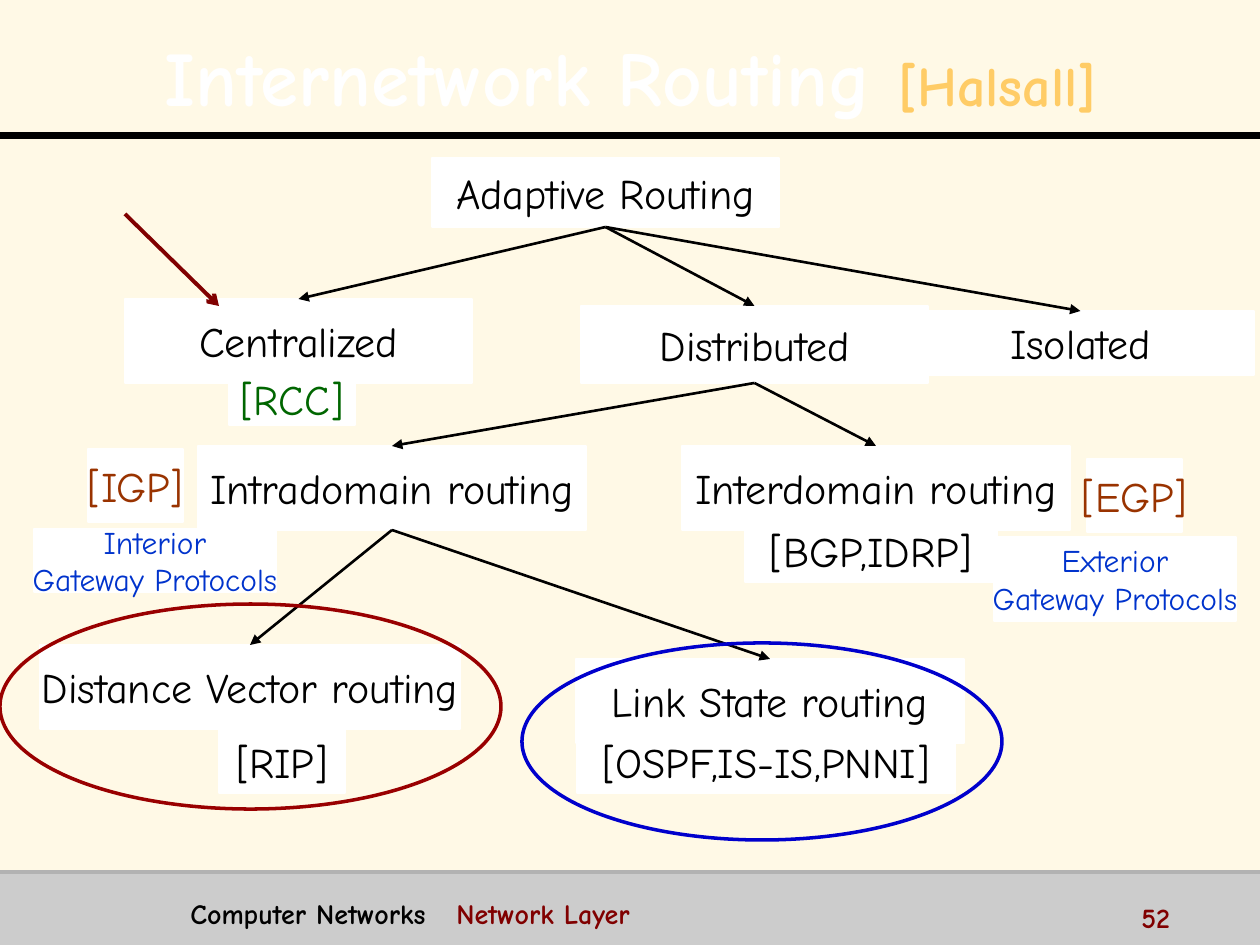
"""Build the Internetwork Routing slide: a tree of adaptive routing methods."""
import lxml.etree
import pptx
import pptx.dml.color
import pptx.enum.shapes
import pptx.enum.text
import pptx.oxml.ns
import pptx.util

RGB = pptx.dml.color.RGBColor
CREAM, WHITE, BLACK = RGB(0xFF, 0xF9, 0xE6), RGB(0xFF, 0xFF, 0xFF), RGB(0, 0, 0)
GREY, SILVER = RGB(0xCC, 0xCC, 0xCC), RGB(0xB2, 0xB2, 0xB2)
GOLD, MAROON, CRIMSON = RGB(0xFF, 0xCC, 0x66), RGB(0x80, 0, 0), RGB(0x99, 0, 0)
RUST, GREEN = RGB(0x99, 0x33, 0), RGB(0, 0x66, 0)
ROYAL, BLUE = RGB(0, 0x33, 0xCC), RGB(0, 0, 0xCC)
FONT = "Comic Neue"
PX = 914400 / 126
WIDTH, HEIGHT = 1260, 945
SHAPE = pptx.enum.shapes.MSO_SHAPE
CENTER = pptx.enum.text.PP_ALIGN.CENTER
LEFT = pptx.enum.text.PP_ALIGN.LEFT
MIDDLE = pptx.enum.text.MSO_ANCHOR.MIDDLE
TOP = pptx.enum.text.MSO_ANCHOR.TOP

NODES = {
    "Adaptive Routing": (432, 158, 347, 69),
    "Centralized": (125, 299, 347, 84),
    "Distributed": (581, 306, 347, 77),
    "Isolated": (907, 311, 347, 64),
    "Intradomain routing": (198, 446, 388, 84),
    "Interdomain routing": (682, 446, 388, 84),
    "Distance Vector routing": (40, 645, 420, 84),
    "Link State routing": (576, 659, 388, 84),
}
CHILDREN = {
    "Adaptive Routing": ("Centralized", "Distributed", "Isolated"),
    "Distributed": ("Intradomain routing", "Interdomain routing"),
    "Intradomain routing": ("Distance Vector routing", "Link State routing"),
}
TAGS = [
    (("[IGP]",), (88, 449, 95, 73), 24, RUST),
    (("[EGP]",), (1087, 459, 95, 73), 24, RUST),
    (("[BGP,IDRP]",), (745, 519, 252, 63), 24, BLACK),
    (("[OSPF,IS-IS,PNNI]",), (577, 730, 378, 63), 24, BLACK),
    (("[RIP]",), (219, 730, 126, 63), 24, BLACK),
    (("[RCC]",), (229, 372, 126, 53), 24, GREEN),
    (("Interior", "Gateway Protocols"), (34, 529, 242, 63), 18, ROYAL),
    (("Exterior", "Gateway Protocols"), (994, 537, 242, 84), 18, ROYAL),
]
RINGS = [((522, 643, 480, 197), BLUE), ((0, 604, 501, 205), CRIMSON)]
POINTER = ((125, 214), (219, 306))
TITLE = [("Internetwork Routing ", 44, WHITE), ("[Halsall]", 32, GOLD)]
FOOTER = [("Computer Networks\t", 16, BLACK), ("Network Layer", 16, MAROON)]
NUMBER = [("52", 16, MAROON)]


def emu(*lengths):
    return [pptx.util.Emu(round(length * PX)) for length in lengths]


def add_child(parent, tag, **attributes):
    return lxml.etree.SubElement(parent, pptx.oxml.ns.qn(tag), attributes)


def add_spans(para, spans, bold):
    for text, size, color in spans:
        span = para.add_run()
        span.text = text
        look = {"name": FONT, "size": pptx.util.Pt(size), "bold": bold}
        for name, value in look.items():
            setattr(span.font, name, value)
        span.font.color.rgb = color


def add_text(page, place, spans, align, anchor):
    box = page.shapes.add_textbox(*emu(*place))
    box.text_frame.word_wrap = True
    box.text_frame.vertical_anchor = anchor
    para = box.text_frame.paragraphs[0]
    para.alignment = align
    add_spans(para, spans, True)
    return para


def add_shadow(span):
    effects = lxml.etree.Element(pptx.oxml.ns.qn("a:effectLst"))
    shadow = add_child(effects, "a:outerShdw", dist="35921", dir="2700000")
    add_child(shadow, "a:srgbClr", val=str(BLACK))
    span.font.fill._xPr.find(pptx.oxml.ns.qn("a:solidFill")).addnext(effects)


def add_figure(page, kind, place, fill, line, weight):
    figure = page.shapes.add_shape(kind, *emu(*place))
    figure.shadow.inherit = False
    if fill is None:
        figure.fill.background()
    else:
        figure.fill.solid()
        figure.fill.fore_color.rgb = fill
    figure.line.color.rgb = line
    figure.line.width = pptx.util.Pt(weight)
    return figure


def add_label(page, lines, place, size, color, weight):
    frame = add_figure(page, SHAPE.RECTANGLE, place, WHITE, WHITE, weight).text_frame
    frame.word_wrap = False
    frame.vertical_anchor = MIDDLE
    for index, text in enumerate(lines):
        para = frame.add_paragraph() if index else frame.paragraphs[0]
        para.alignment = CENTER
        add_spans(para, [(text, size, color)], False)


def add_line(page, start, end, color, weight, head=None):
    kind = pptx.enum.shapes.MSO_CONNECTOR.STRAIGHT
    line = page.shapes.add_connector(kind, *emu(*start, *end))
    line.line.color.rgb = color
    line.line.width = pptx.util.Pt(weight)
    if head:
        add_child(line.line._get_or_add_ln(), "a:tailEnd", type=head)
    add_child(line._element.spPr, "a:effectLst")


def add_frame(page):
    add_figure(page, SHAPE.RECTANGLE, (0, 872, WIDTH, 73), GREY, GREY, 0.75)
    add_line(page, (0, 136), (WIDTH, 136), BLACK, 4)
    add_line(page, (0, 872), (WIDTH, 872), SILVER, 2)
    title = add_text(page, (25, 16, 1211, 110), TITLE, CENTER, MIDDLE)
    title.line_spacing = 1.1
    for span in title.runs:
        add_shadow(span)
    footer = add_text(page, (178, 890, 917, 39), FOOTER, LEFT, TOP)
    stops = add_child(footer._p.get_or_add_pPr(), "a:tabLst")
    add_child(stops, "a:tab", pos=str(emu(266)[0]), algn="l")
    add_text(page, (1129, 894, 126, 32), NUMBER, LEFT, TOP)


def add_tree(page):
    for name, place in NODES.items():
        add_label(page, (name,), place, 24, BLACK, 0.75)
    for lines, place, size, color in TAGS:
        add_label(page, lines, place, size, color, 1.5)
    for parent, children in CHILDREN.items():
        left, top, width, height = NODES[parent]
        start = (left + width / 2, top + height)
        for child in children:
            left_to, top_to, width_to, _ = NODES[child]
            end = (left_to + width_to / 2, top_to)
            add_line(page, start, end, BLACK, 1.5, "triangle")
    for place, color in RINGS:
        add_figure(page, SHAPE.OVAL, place, None, color, 2)
    add_line(page, *POINTER, MAROON, 2.25, "arrow")


def main():
    deck = pptx.Presentation()
    deck.slide_width, deck.slide_height = emu(WIDTH, HEIGHT)
    page = deck.slides.add_slide(deck.slide_layouts[6])
    page.background.fill.solid()
    page.background.fill.fore_color.rgb = CREAM
    add_frame(page)
    add_tree(page)
    deck.save("out.pptx")


if __name__ == "__main__":
    main()
